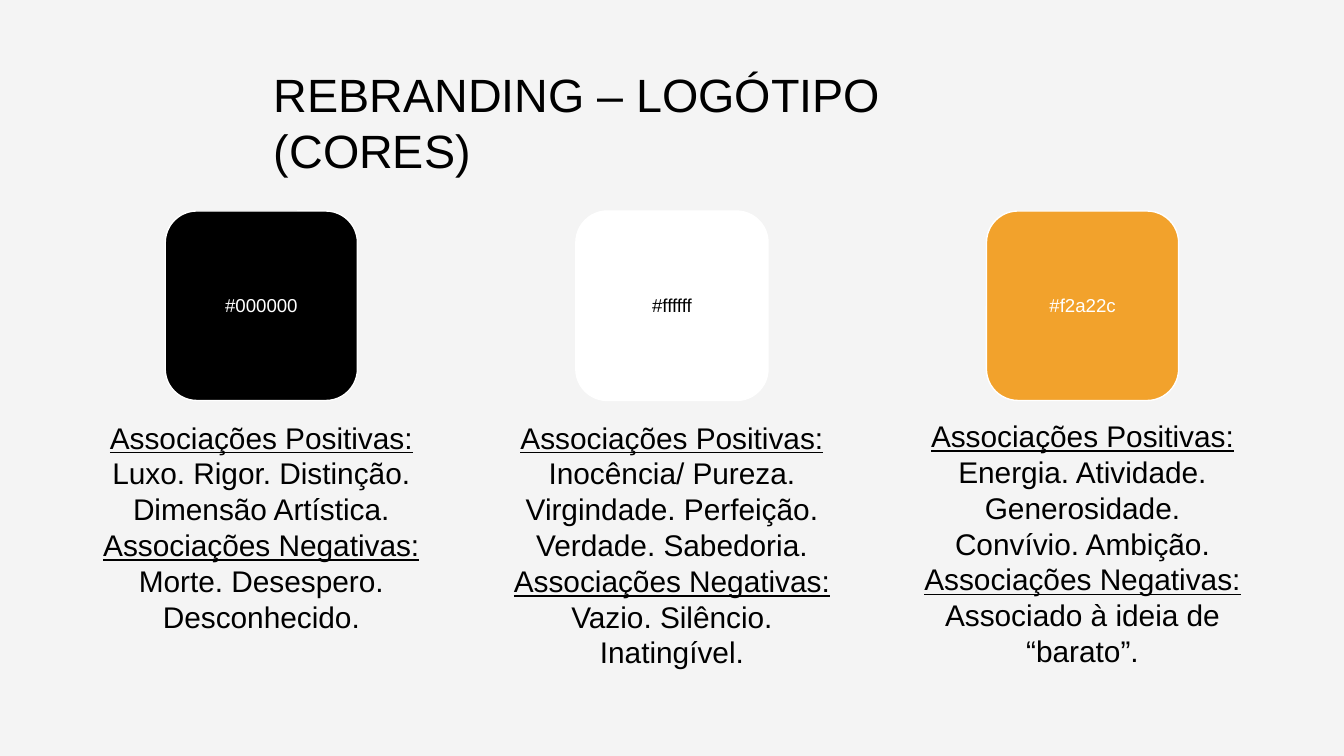
from lxml.etree import SubElement
from pptx import Presentation
from pptx.dml.color import RGBColor
from pptx.enum.shapes import MSO_SHAPE as Shape
from pptx.enum.text import MSO_ANCHOR as Anchor, PP_ALIGN as Align
from pptx.oxml.ns import qn
from pptx.util import Inches, Pt

COLORS = {"background": "F3F3F3", "black": "000000", "white": "FFFFFF", "orange": "F2A22C"}
WIDTH = 10
HEIGHT = WIDTH * 9 / 16
COLUMN = 3.055
SWATCH_WIDTH, SWATCH_HEIGHT, SWATCH_TOP = 1.43, 1.41, 1.57
LABEL_TOP, LABEL_HEIGHT = 1.86, 0.82
LIST_WIDTH, LIST_HEIGHT = 2.56, 1.72

SWATCHES = [
    ("black", "white", "#000000", 3.07,
     "Luxo. Rigor. Distinção. Dimensão Artística.",
     "Morte. Desespero. Desconhecido."),
    ("white", "black", "#ffffff", 3.07,
     "Inocência/ Pureza. Virgindade. Perfeição. Verdade. Sabedoria.",
     "Vazio. Silêncio. Inatingível."),
    ("orange", "white", "#f2a22c", 3.06,
     "Energia. Atividade. Generosidade. Convívio. Ambição.",
     "Associado à ideia de “barato”."),
]


def rgb(name):
    return RGBColor.from_string(COLORS[name])


def add_text(page, frame, lines, size, color="black", align=Align.CENTER,
             anchor=Anchor.TOP, margins=(0.1, 0.1)):
    """Add a text box; lines holds (text, underlined) pairs, one per paragraph."""
    box = page.shapes.add_textbox(*map(Inches, frame))
    side, end = map(Inches, margins)
    layout = {"word_wrap": True, "vertical_anchor": anchor, "margin_left": side,
              "margin_right": side, "margin_top": end, "margin_bottom": end}
    for name, value in layout.items():
        setattr(box.text_frame, name, value)
    for number, (text, underlined) in enumerate(lines):
        para = box.text_frame.add_paragraph() if number else box.text_frame.paragraphs[0]
        para.alignment = align
        span = para.add_run()
        span.text = text
        for name, value in {"name": "Arial", "size": Pt(size), "underline": underlined}.items():
            setattr(span.font, name, value)
        span.font.color.rgb = rgb(color)


deck = Presentation()
deck.slide_width, deck.slide_height = Inches(WIDTH), Inches(HEIGHT)
page = deck.slides.add_slide(deck.slide_layouts[6])
page.background.fill.solid()
page.background.fill.fore_color.rgb = rgb("background")
tint = next(page.element.iter(qn("a:srgbClr")))
SubElement(tint, qn("a:alpha")).set("val", "84000")

add_text(page, (1.94, 0.39, 6.11, 0.63), [("REBRANDING – LOGÓTIPO (CORES)", False)],
         25, align=Align.LEFT)

for index, (fill, ink, code, list_top, positive, negative) in enumerate(SWATCHES):
    center = WIDTH / 2 + (index - 1) * COLUMN
    left = center - SWATCH_WIDTH / 2

    swatch = page.shapes.add_shape(
        Shape.ROUNDED_RECTANGLE,
        *map(Inches, (left, SWATCH_TOP, SWATCH_WIDTH, SWATCH_HEIGHT)))
    swatch.shadow.inherit = False
    swatch.adjustments[0] = 1 / 6
    swatch.fill.solid()
    swatch.fill.fore_color.rgb = rgb(fill)
    swatch.line.color.rgb = rgb("white")
    swatch.line.width = Pt(0.75)

    add_text(page, (left, LABEL_TOP, SWATCH_WIDTH, LABEL_HEIGHT), [(code, False)],
             10, ink, anchor=Anchor.MIDDLE)

    associations = [("Associações Positivas:", True), (positive, False),
                    ("Associações Negativas:", True), (negative, False)]
    add_text(page, (center - LIST_WIDTH / 2, list_top, LIST_WIDTH, LIST_HEIGHT),
             associations, 16, margins=(0.1, 0.05))

deck.save("out.pptx")
